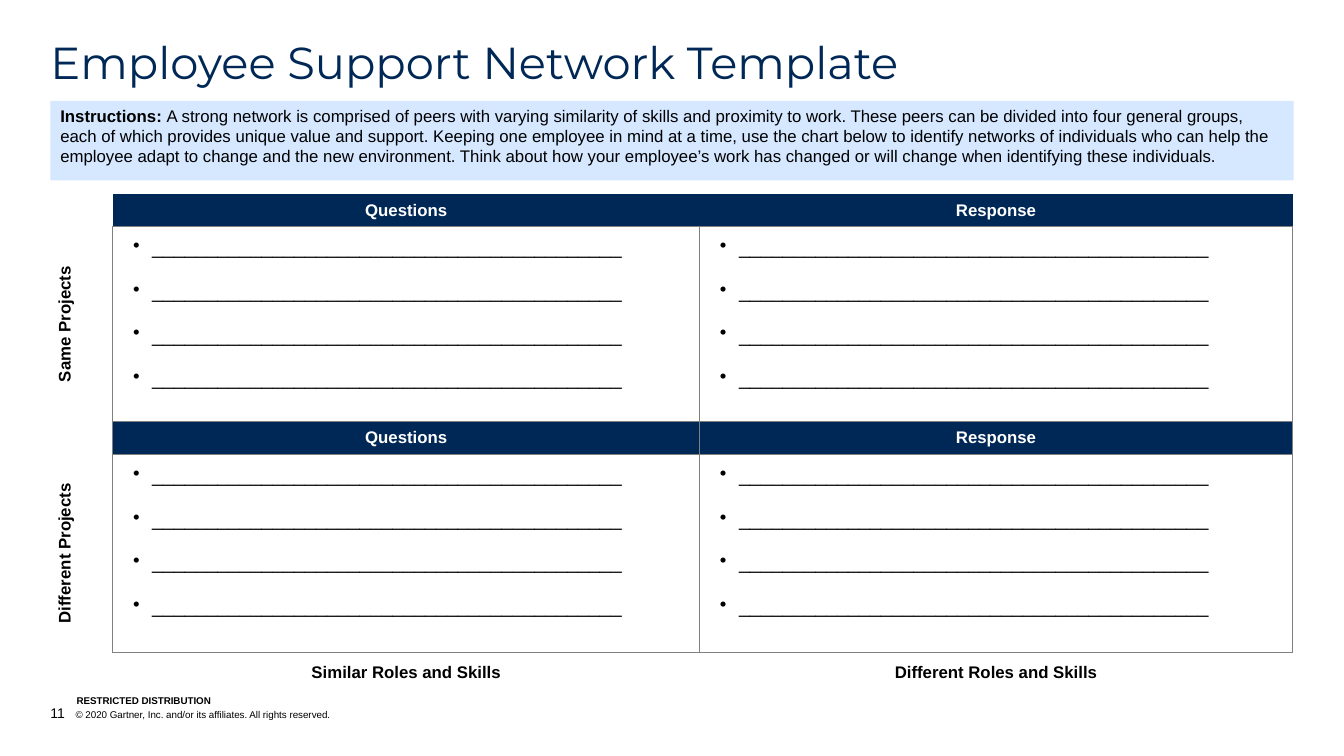
import pptx
import pptx.util
import pptx.dml.color
import pptx.enum.shapes
import pptx.enum.text
import pptx.oxml
import pptx.oxml.ns

Inches = pptx.util.Inches
Pt = pptx.util.Pt
ALIGN = pptx.enum.text.PP_ALIGN
ANCHOR = pptx.enum.text.MSO_ANCHOR

NAVY, PALE, GREY, WHITE, BLACK = "002856", "D5E8FF", "808080", "FFFFFF", "000000"
COLS = [0.62, 5.82, 5.88]
ROWS = [0.33, 1.93, 0.33, 1.96, 0.39]
HEADS = ["Questions", "Response"]
SIDES = {1: "Same Projects", 3: "Different Projects"}
ROLES = ["Similar Roles and Skills", "Different Roles and Skills"]
BLANK = "_" * 43
INTRO = (
    "A strong network is comprised of peers with varying similarity of skills and "
    "proximity to work. These peers can be divided into four general groups, each of "
    "which provides unique value and support. Keeping one employee in mind at a time, "
    "use the chart below to identify networks of individuals who can help the employee "
    "adapt to change and the new environment. Think about how your employee’s work has "
    "changed or will change when identifying these individuals."
)


def color(hue):
    return pptx.dml.color.RGBColor.from_string(hue)


def apply(item, values):
    for name, value in values.items():
        setattr(item, name, value)


def make(tag, inner=""):
    return pptx.oxml.parse_xml(f"<a:{tag} {pptx.oxml.ns.nsdecls('a')}>{inner}</a:{tag.split()[0]}>")


def paint(item, hue):
    item.fill.solid()
    item.fill.fore_color.rgb = color(hue)


def write(par, text, size, hue=BLACK, bold=False, face="Arial"):
    run = par.add_run()
    run.text = text
    apply(run.font, {"size": Pt(size), "bold": bold, "name": face})
    run.font.color.rgb = color(hue)


def hang(par, width, child):
    props = par._p.get_or_add_pPr()
    props.set("marL", str(Inches(width)))
    props.set("indent", str(-Inches(width)))
    props.append(child)


def add_text(slide, box, anchor):
    frame = slide.shapes.add_textbox(*map(Inches, box)).text_frame
    apply(frame, {
        "word_wrap": True, "vertical_anchor": anchor,
        "margin_left": 0, "margin_right": 0, "margin_top": 0, "margin_bottom": 0,
    })
    return frame.paragraphs[0]


def add_title(slide, box):
    par = add_text(slide, box, ANCHOR.TOP)
    par.line_spacing = 0.9
    write(par, "Employee Support Network Template", 32, NAVY, face="Montserrat")


def add_intro(slide, box):
    panel = slide.shapes.add_shape(pptx.enum.shapes.MSO_SHAPE.RECTANGLE, *map(Inches, box))
    panel.shadow.inherit = False
    paint(panel, PALE)
    panel.line.fill.background()
    apply(panel.text_frame, {"word_wrap": True, "vertical_anchor": ANCHOR.TOP})
    par = panel.text_frame.paragraphs[0]
    par.alignment = ALIGN.LEFT
    write(par, "Instructions: ", 12, bold=True)
    write(par, INTRO, 12)


def edge(cell, sides):
    props = cell._tc.get_or_add_tcPr()
    for spot, side in enumerate("LRTB"):
        if side in sides:
            line = make(f'ln{side} w="12700"', f'<a:solidFill><a:srgbClr val="{GREY}"/></a:solidFill>')
        else:
            line = make(f'ln{side} w="0"', "<a:noFill/>")
        props.insert(spot, line)


def pad(cell, left, top, right, base):
    apply(cell, {
        "margin_left": Inches(left), "margin_top": Inches(top),
        "margin_right": Inches(right), "margin_bottom": Inches(base),
    })


def label(cell, text, hue=BLACK):
    cell.vertical_anchor = ANCHOR.MIDDLE
    par = cell.text_frame.paragraphs[0]
    par.alignment = ALIGN.CENTER
    write(par, text, 12, hue, True)


def add_blanks(cell):
    pad(cell, 0.2, 0.1, 0.1, 0.05)
    frame = cell.text_frame
    for count in range(4):
        par = frame.add_paragraph() if count else frame.paragraphs[0]
        hang(par, 0.19, make('buChar char="•"'))
        if count:
            par.space_before = Pt(15.5)
        write(par, BLANK, 14)


def fill_side(cell, row):
    if row in SIDES:
        label(cell, SIDES[row])
        cell._tc.get_or_add_tcPr().set("vert", "vert270")
    else:
        pad(cell, 0, 0, 0, 0)
    edge(cell, "R" if row in (1, 2, 3) else "")


def fill_main(cell, row, col):
    if row in (0, 2):
        paint(cell, NAVY)
        label(cell, HEADS[col - 1], WHITE)
    elif row == 4:
        pad(cell, 0.1, 0.1, 0.1, 0.1)
        label(cell, ROLES[col - 1])
    else:
        add_blanks(cell)
    edge(cell, {0: "B", 4: "T"}.get(row, "LRTB"))


def add_grid(slide, box):
    table = slide.shapes.add_table(len(ROWS), len(COLS), *map(Inches, box)).table
    apply(table, {"first_row": False, "horz_banding": False})
    for col, width in enumerate(COLS):
        table.columns[col].width = Inches(width)
    for row, height in enumerate(ROWS):
        table.rows[row].height = Inches(height)
        for col in range(len(COLS)):
            cell = table.cell(row, col)
            paint(cell, WHITE)
            if col:
                fill_main(cell, row, col)
            else:
                fill_side(cell, row)


def add_footer(slide, box):
    left, top, width, height = box
    par = add_text(slide, box, ANCHOR.BOTTOM)
    hang(par, 0.25, make("tabLst", f'<a:tab pos="{Inches(0.25)}" algn="l"/>'))
    write(par, "11", 10)
    write(par, "\t© 2020 Gartner, Inc. and/or its affiliates. All rights reserved.", 7)
    note = add_text(slide, (left + 0.26, top - 0.1, 2.53, 0.12), ANCHOR.BOTTOM)
    write(note, "RESTRICTED DISTRIBUTION", 7, bold=True)


def main():
    deck = pptx.Presentation()
    apply(deck, {"slide_width": Inches(13.33), "slide_height": Inches(7.5)})
    slide = deck.slides.add_slide(deck.slide_layouts[6])
    add_footer(slide, (0.5, 6.99, 7.99, 0.17))
    add_title(slide, (0.5, 0.4, 12.33, 0.48))
    add_intro(slide, (0.5, 1, 12.33, 0.79))
    add_grid(slide, (0.5, 1.92, sum(COLS), sum(ROWS)))
    deck.save("out.pptx")


if __name__ == "__main__":
    main()
